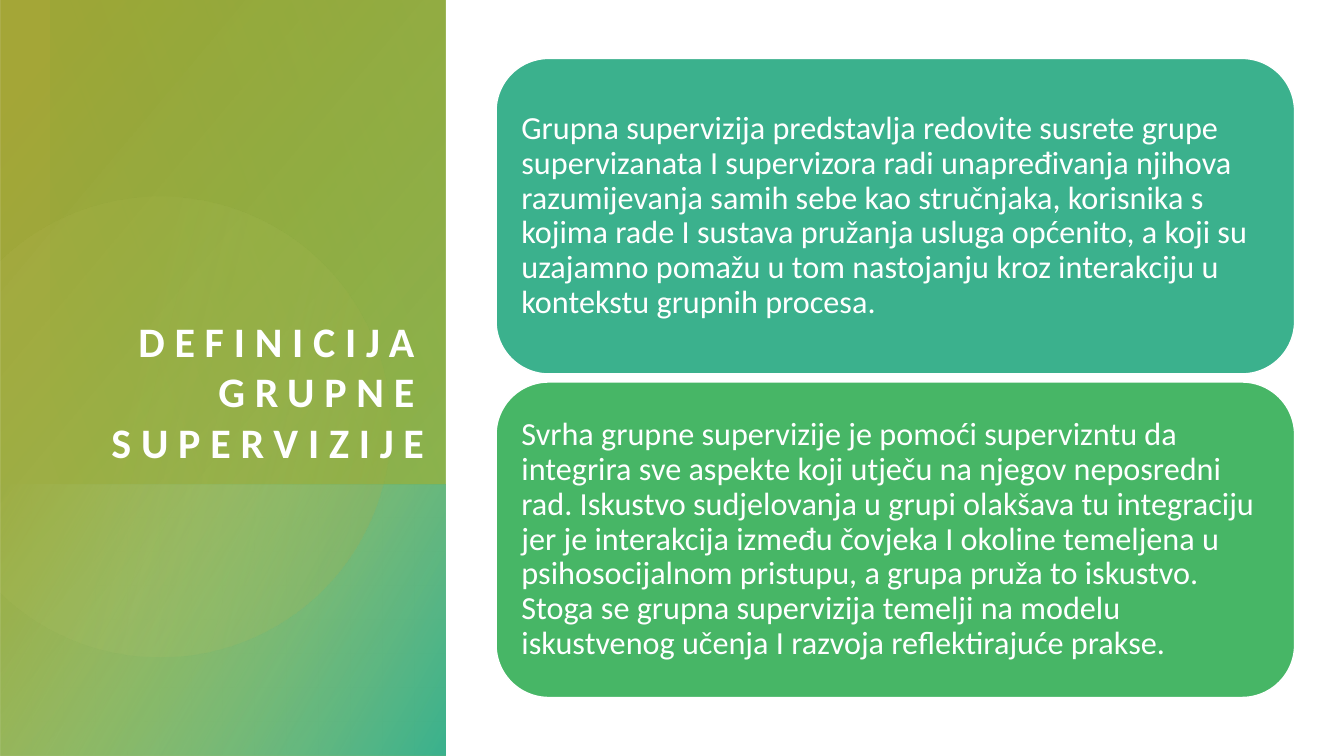
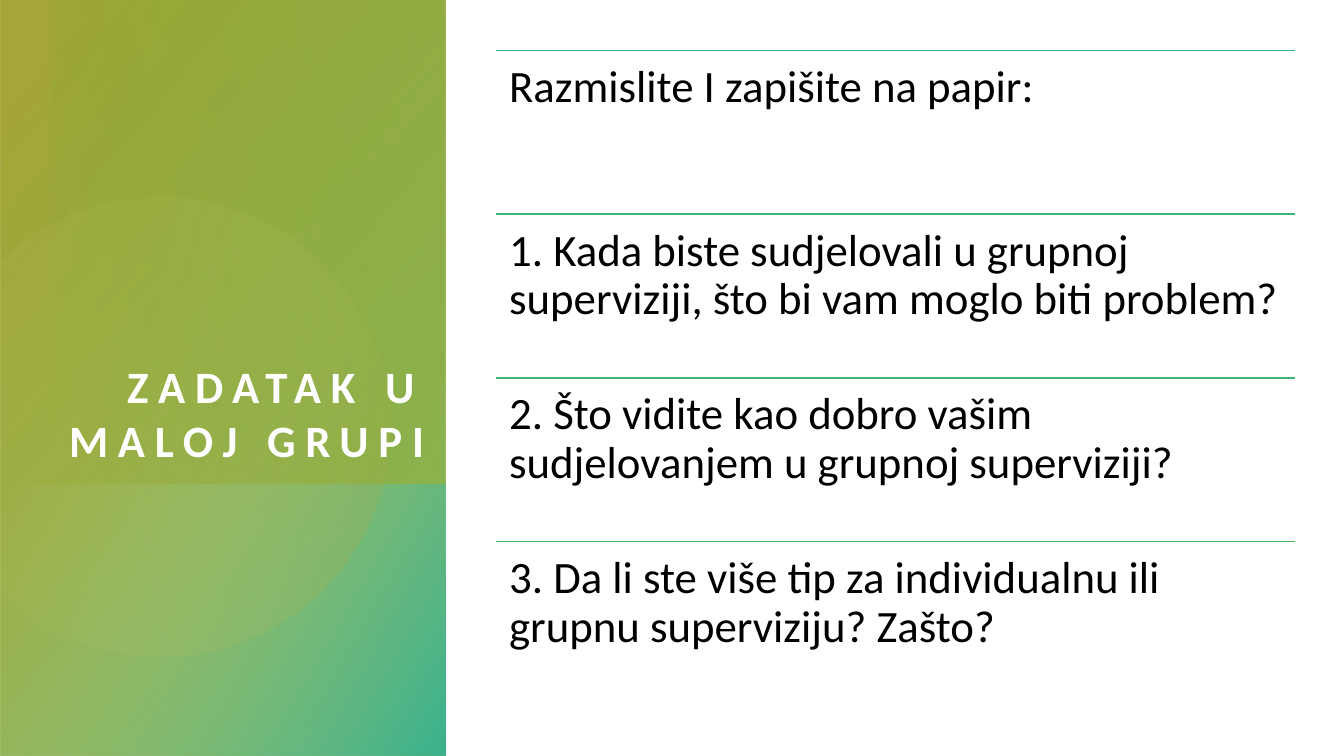
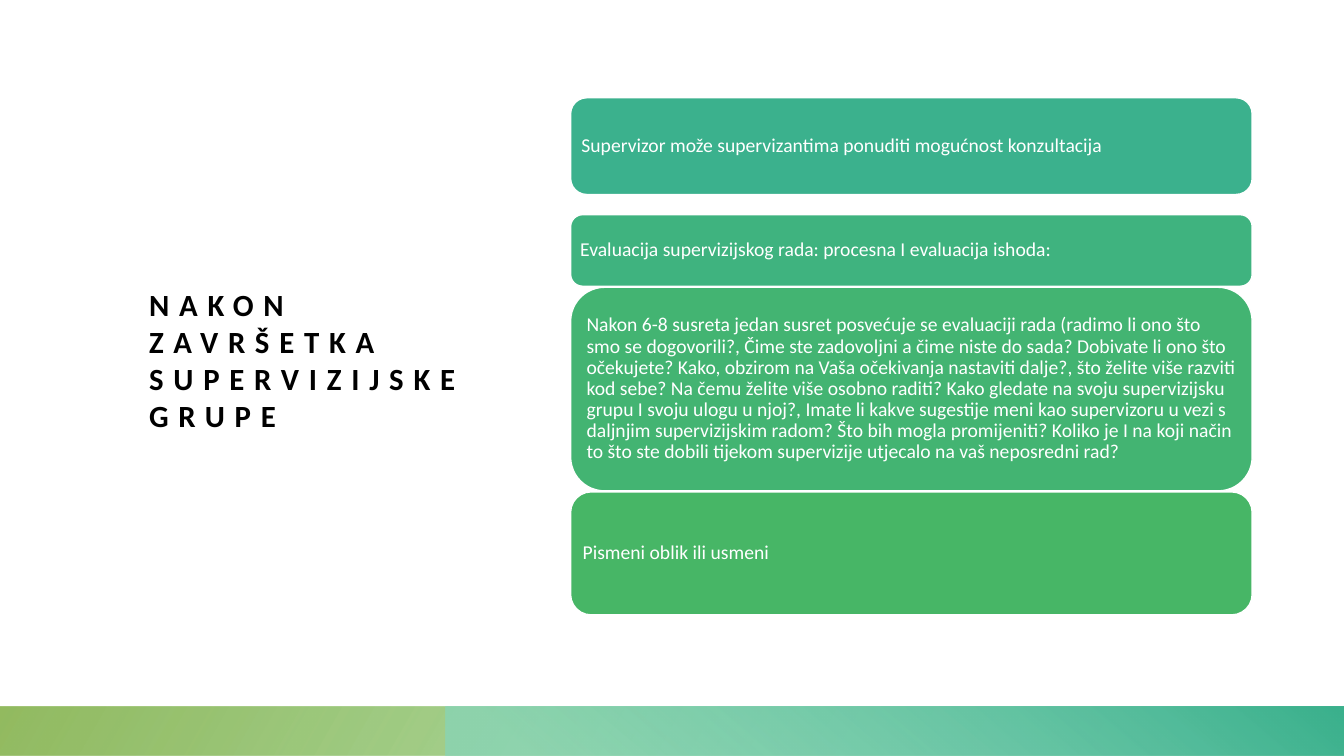
import math
from dataclasses import dataclass

from lxml import etree
from pptx import Presentation
from pptx.dml.color import RGBColor
from pptx.enum import shapes, text
from pptx.oxml import ns
from pptx.util import Inches, Pt


@dataclass(frozen=True)
class Theme:
    font: str = "Calibri"
    white: str = "FFFFFF"
    black: str = "000000"
    gold: str = "A4A637"
    olive: str = "80AF45"
    leaf: str = "4CB13B"
    lime: str = "D2D47D"
    pale: str = "B3D28D"
    mint: str = "84D6BD"
    teal: str = "3BB18D"
    steps: tuple = ("3BB18D", "3FB37F", "43B472", "47B666")
    card: int = 23
    task: int = 32
    note: int = 14
    track: int = 7


T = Theme()
WIDE, HIGH = 13.33, 7.5
SIDE = 4.42
LEFT, SPAN = 4.92, 7.92


def rgb(code):
    return RGBColor.from_string(code)


def blend(shape, stops, angle):
    """Fill with (position %, colour, opacity %) stops; angle runs clockwise."""
    shape.shadow.inherit = False
    shape.line.fill.background()
    shape.fill.background()
    grad = etree.Element(ns.qn("a:gradFill"), rotWithShape="1")
    row = etree.SubElement(grad, ns.qn("a:gsLst"))
    for place, code, alpha in stops:
        stop = etree.SubElement(row, ns.qn("a:gs"), pos=str(place * 1000))
        tint = etree.SubElement(stop, ns.qn("a:srgbClr"), val=code)
        if alpha < 100:
            etree.SubElement(tint, ns.qn("a:alpha"), val=str(alpha * 1000))
    etree.SubElement(grad, ns.qn("a:lin"), ang=str(angle * 60000), scaled="0")
    props = shape._element.spPr
    props.replace(props.find(ns.qn("a:noFill")), grad)


def band(slide, box, turn, stops, angle):
    """Draw a mirrored gradient band that covers box once it is turned."""
    x, y, w, h = box
    if turn % 180:
        x, y, w, h = x + (w - h) / 2, y + (h - w) / 2, h, w
    shape = slide.shapes.add_shape(
        shapes.MSO_SHAPE.RECTANGLE, *map(Inches, (x, y, w, h)))
    shape._element.spPr.xfrm.set("flipH", "1")
    shape.rotation = turn
    blend(shape, stops, angle)


def disc(slide, x, y, r):
    """Draw a pale disc cut off at the slide's left edge."""
    reach = math.acos(-x / r)
    count = 90
    turns = [reach * (2 * i / count - 1) for i in range(count + 1)]
    dots = [(Inches(x + r * math.cos(a)), Inches(y + r * math.sin(a)))
            for a in turns]
    path = slide.shapes.build_freeform(*dots[0])
    path.add_line_segments(dots[1:], close=True)
    blend(path.convert_to_shape(), [(36, T.lime, 6), (100, T.gold, 26)], 14)


def write(shape, words, size, color, inset=0.0, anchor="TOP", align="LEFT",
          bold=False, track=0, lead=None):
    frame = shape.text_frame
    frame.word_wrap = True
    frame.vertical_anchor = text.MSO_ANCHOR[anchor]
    frame.margin_left = frame.margin_right = Inches(inset)
    frame.margin_top = frame.margin_bottom = Inches(inset)
    para = frame.paragraphs[0]
    para.alignment = text.PP_ALIGN[align]
    if lead:
        para.line_spacing = lead
    run = para.add_run()
    run.text = words
    font = run.font
    font.name, font.size, font.bold = T.font, Pt(size), bold
    font.color.rgb = rgb(color)
    if track:
        run._r.get_or_add_rPr().set("spc", str(track * 100))


def label(slide, box, words, size, color, **style):
    shape = slide.shapes.add_textbox(*map(Inches, box))
    write(shape, words, size, color, **style)


def title(slide, box, words, size, color, **style):
    label(slide, box, words, size, color, bold=True, track=T.track, **style)


def card(slide, box, color, words, size, inset):
    shape = slide.shapes.add_shape(
        shapes.MSO_SHAPE.ROUNDED_RECTANGLE, *map(Inches, box))
    shape.shadow.inherit = False
    shape.fill.solid()
    shape.fill.fore_color.rgb = rgb(color)
    shape.line.color.rgb = rgb(T.white)
    shape.line.width = Pt(1)
    write(shape, words, size, T.white, inset, "MIDDLE", lead=0.9)


def rule(slide, x, y, w, color):
    line = slide.shapes.add_connector(
        shapes.MSO_CONNECTOR.STRAIGHT, *map(Inches, (x, y, x + w, y)))
    line.line.color.rgb = rgb(color)
    line.line.width = Pt(1)
    etree.SubElement(line._element.spPr, ns.qn("a:effectLst"))


def panel(slide, words, size):
    """Draw the coloured left panel with its title."""
    edge = 4.81
    band(slide, (0, 0, SIDE, HIGH), 270,
         [(8, T.gold, 100), (100, T.olive, 89)], 50)
    band(slide, (0, edge, SIDE, HIGH - edge), 270,
         [(0, T.pale, 0), (99, T.teal, 100)], 60)
    disc(slide, 1.59, 4.23, 2.28)
    band(slide, (0.5, 0, SIDE - 0.5, edge), 90,
         [(0, T.olive, 29), (100, T.leaf, 0)], 110)
    title(slide, (0.5, 0.95, 3.71, 3.68), words, size, T.white,
          anchor="BOTTOM", align="RIGHT")


def meaning(slide):
    panel(slide, "DEFINICIJA GRUPNE SUPERVIZIJE", 30)
    cards = [
        (T.steps[0], "Grupna supervizija predstavlja redovite susrete grupe "
         "supervizanata I supervizora radi unapređivanja njihova razumijevanja "
         "samih sebe kao stručnjaka, korisnika s kojima rade I sustava pružanja "
         "usluga općenito, a koji su uzajamno pomažu u tom nastojanju kroz "
         "interakciju u kontekstu grupnih procesa."),
        (T.steps[-1], "Svrha grupne supervizije je pomoći supervizntu da "
         "integrira sve aspekte koji utječu na njegov neposredni rad. Iskustvo "
         "sudjelovanja u grupi olakšava tu integraciju jer je interakcija između "
         "čovjeka I okoline temeljena u psihosocijalnom pristupu, a grupa pruža "
         "to iskustvo. Stoga se grupna supervizija temelji na modelu iskustvenog "
         "učenja I razvoja reflektirajuće prakse."),
    ]
    high, gap = 3.13, 0.08
    for i, (color, words) in enumerate(cards):
        box = (LEFT, 0.58 + i * (high + gap), SPAN, high)
        card(slide, box, color, words, T.card, 0.1)


def task(slide):
    panel(slide, "ZADATAK U MALOJ GRUPI", 32)
    lines = [
        "Razmislite I zapišite na papir:",
        "1. Kada biste sudjelovali u grupnoj superviziji, što bi vam moglo biti "
        "problem?",
        "2. Što vidite kao dobro vašim sudjelovanjem u grupnoj superviziji?",
        "3. Da li ste više tip za individualnu ili grupnu superviziju? Zašto?",
    ]
    high = 6.5 / len(lines)
    for i, (color, words) in enumerate(zip(T.steps, lines)):
        y = 0.5 + i * high
        rule(slide, LEFT, y, SPAN, color)
        label(slide, (LEFT, y, SPAN, high), words, T.task, T.black,
              inset=0.13, lead=0.9)


def closing(slide):
    title(slide, (1.48, 1.12, 3.64, 4.89),
          "NAKON ZAVRŠETKA SUPERVIZIJSKE GRUPE", 22, T.black, anchor="MIDDLE")
    foot = 0.49
    band(slide, (0, HIGH - foot, WIDE, foot), 180,
         [(14, T.leaf, 28), (100, T.olive, 85)], 150)
    band(slide, (SIDE, HIGH - foot, WIDE - SIDE, foot), 0,
         [(9, T.mint, 68), (99, T.teal, 100)], 230)
    cards = [
        (0.97, 0.96,
         "Supervizor može supervizantima ponuditi mogućnost konzultacija"),
        (2.13, 0.71,
         "Evaluacija supervizijskog rada: procesna I evaluacija ishoda:"),
        (2.85, 2.02,
         "Nakon 6-8 susreta jedan susret posvećuje se evaluaciji rada (radimo li "
         "ono što smo se dogovorili?, Čime ste zadovoljni a čime niste do sada? "
         "Dobivate li ono što očekujete? Kako, obzirom na Vaša očekivanja "
         "nastaviti dalje?, što želite više razviti kod sebe? Na čemu želite "
         "više osobno raditi? Kako gledate na svoju supervizijsku grupu I svoju "
         "ulogu u njoj?, Imate li kakve sugestije meni kao supervizoru u vezi s "
         "daljnjim supervizijskim radom? Što bih mogla promijeniti? Koliko je I "
         "na koji način to što ste dobili tijekom supervizije utjecalo na vaš "
         "neposredni rad?"),
        (4.88, 1.22, "Pismeni oblik ili usmeni"),
    ]
    for color, (y, high, words) in zip(T.steps, cards):
        card(slide, (5.66, y, 6.76, high), color, words, T.note, 0.06)


def main():
    deck = Presentation()
    deck.slide_width, deck.slide_height = Inches(WIDE), Inches(HIGH)
    for draw in (meaning, task, closing):
        draw(deck.slides.add_slide(deck.slide_layouts[6]))
    deck.save("out.pptx")


if __name__ == "__main__":
    main()
